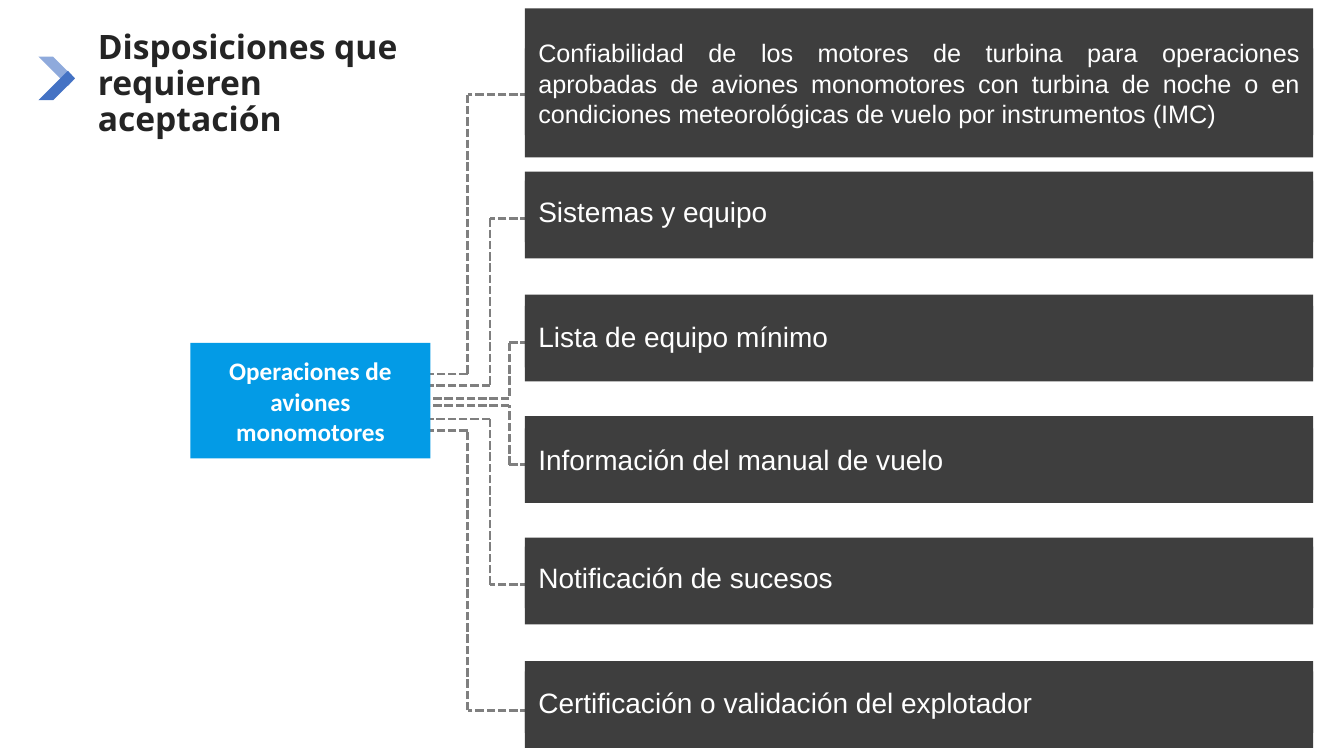
from dataclasses import dataclass

from lxml import etree
from pptx import Presentation
from pptx.dml.color import RGBColor
from pptx.enum.dml import MSO_LINE
from pptx.enum.shapes import MSO_CONNECTOR, MSO_SHAPE
from pptx.enum.text import MSO_ANCHOR, PP_ALIGN
from pptx.oxml.ns import qn
from pptx.util import Pt

RECTANGLE = MSO_SHAPE.RECTANGLE
STRAIGHT = MSO_CONNECTOR.STRAIGHT
SHORT_DASH = MSO_LINE.SQUARE_DOT
MIDDLE = MSO_ANCHOR.MIDDLE
LEFT, CENTER, JUSTIFY = PP_ALIGN.LEFT, PP_ALIGN.CENTER, PP_ALIGN.JUSTIFY

COLORS = {
    "title": "242424",
    "chevron_light": "8FAADC",
    "chevron_dark": "4472C4",
    "branch": "7F7F7F",
    "card": "3E3E3E",
    "topic": "039BE6",
    "white": "FFFFFF",
}

CARD_LEFT, CARD_WIDTH, CARD_HEIGHT = 375, 563, 62
BRANCH_START, BRANCH_END = 281, 579
TOPIC_LEFT, TOPIC_WIDTH = 136, 171.5


@dataclass
class Provision:
    """A card on the right and the dashed branch that leads to it."""
    text: str
    card_top: float
    label_top: float
    branch_y: float
    topic_y: float
    trunk_x: float
    label_height: float = 44
    size: float = 20
    align: PP_ALIGN = LEFT


PROVISIONS = [
    Provision("Confiabilidad de los motores de turbina para operaciones aprobadas "
              "de aviones monomotores con turbina de noche o en condiciones "
              "meteorológicas de vuelo por instrumentos (IMC)",
              34.5, 6, 67.7, 267.2, 334, 106.5, 18, JUSTIFY),
    Provision("Sistemas y equipo", 122.5, 129, 156, 275.5, 350),
    Provision("Lista de equipo mínimo", 210.5, 218.5, 244.7, 284.4, 363.7),
    Provision("Información del manual de vuelo", 297.3, 306, 332, 289.5, 363.7),
    Provision("Notificación de sucesos", 384, 390.5, 417.7, 299.3, 350),
    Provision("Certificación o validación del explotador",
              472.2, 479.5, 507.5, 307.5, 334),
]


def color(name: str) -> RGBColor:
    return RGBColor.from_string(COLORS[name])


def paint(shape, fill: str) -> None:
    shape.shadow.inherit = False
    shape.fill.solid()
    shape.fill.fore_color.rgb = color(fill)
    shape.line.fill.background()


def add_rect(left: float, top: float, width: float, height: float, fill: str):
    rect = slide.shapes.add_shape(RECTANGLE, Pt(left), Pt(top), Pt(width), Pt(height))
    paint(rect, fill)
    return rect


def write(shape, text: str, *, font: str, size: float, ink: str, bold: bool = False,
          align: PP_ALIGN = LEFT, margin: float = 9.5,
          spacing: float = 1.0) -> None:
    frame = shape.text_frame
    frame.word_wrap = True
    frame.vertical_anchor = MIDDLE
    frame.margin_left = frame.margin_right = Pt(margin)
    frame.margin_top = frame.margin_bottom = Pt(margin)
    paragraph = frame.paragraphs[0]
    paragraph.alignment = align
    paragraph.line_spacing = spacing
    run = paragraph.add_run()
    run.text = text
    run.font.name = font
    run.font.size = Pt(size)
    run.font.bold = bold
    run.font.color.rgb = color(ink)


def add_chevron_arm(points: list[tuple[float, float]], fill: str) -> None:
    start, *rest = [(Pt(x), Pt(y)) for x, y in points]
    builder = slide.shapes.build_freeform(*start)
    builder.add_line_segments(rest, close=True)
    paint(builder.convert_to_shape(), fill)


def add_branch(provision: Provision) -> None:
    trunk, outer, inner = provision.trunk_x, provision.branch_y, provision.topic_y
    route = [(BRANCH_END, outer), (trunk, outer), (trunk, inner), (BRANCH_START, inner)]
    for (x1, y1), (x2, y2) in zip(route, route[1:]):
        dash = slide.shapes.add_connector(STRAIGHT, Pt(x1), Pt(y1), Pt(x2), Pt(y2))
        dash.line.color.rgb = color("branch")
        dash.line.width = Pt(2)
        dash.line.dash_style = SHORT_DASH
        etree.SubElement(dash._element.spPr, qn("a:effectLst"))


def add_card(provision: Provision) -> None:
    add_rect(CARD_LEFT, provision.card_top, CARD_WIDTH, CARD_HEIGHT, "card")
    label = add_rect(CARD_LEFT, provision.label_top, CARD_WIDTH,
                     provision.label_height, "card")
    write(label, provision.text, font="Arial", size=provision.size,
          ink="white", align=provision.align)


presentation = Presentation()
presentation.slide_width, presentation.slide_height = Pt(960), Pt(540)
slide = presentation.slides.add_slide(presentation.slide_layouts[6])

# Chevron beside the title
add_chevron_arm([(27.5, 40.5), (48.5, 61.5), (53.5, 56), (38, 40.5)], "chevron_light")
add_chevron_arm([(27.5, 71.5), (48.5, 50.5), (53.5, 56), (38, 71.5)], "chevron_dark")

# Title
title = slide.shapes.add_textbox(Pt(62.8), Pt(8), Pt(244), Pt(105))
write(title, "Disposiciones que requieren aceptación", font="Open Sans", size=24,
      ink="title", bold=True, margin=7.2, spacing=0.9)

# Dashed branches, behind the cards
for provision in PROVISIONS:
    add_branch(provision)

# Provision cards
for provision in PROVISIONS:
    add_card(provision)

# Central topic
add_rect(TOPIC_LEFT, 245, TOPIC_WIDTH, 82.5, "topic")
topic = slide.shapes.add_textbox(Pt(TOPIC_LEFT), Pt(244), Pt(TOPIC_WIDTH), Pt(85))
write(topic, "Operaciones de aviones monomotores", font="Calibri", size=18,
      ink="white", bold=True, align=CENTER)

presentation.save("out.pptx")
